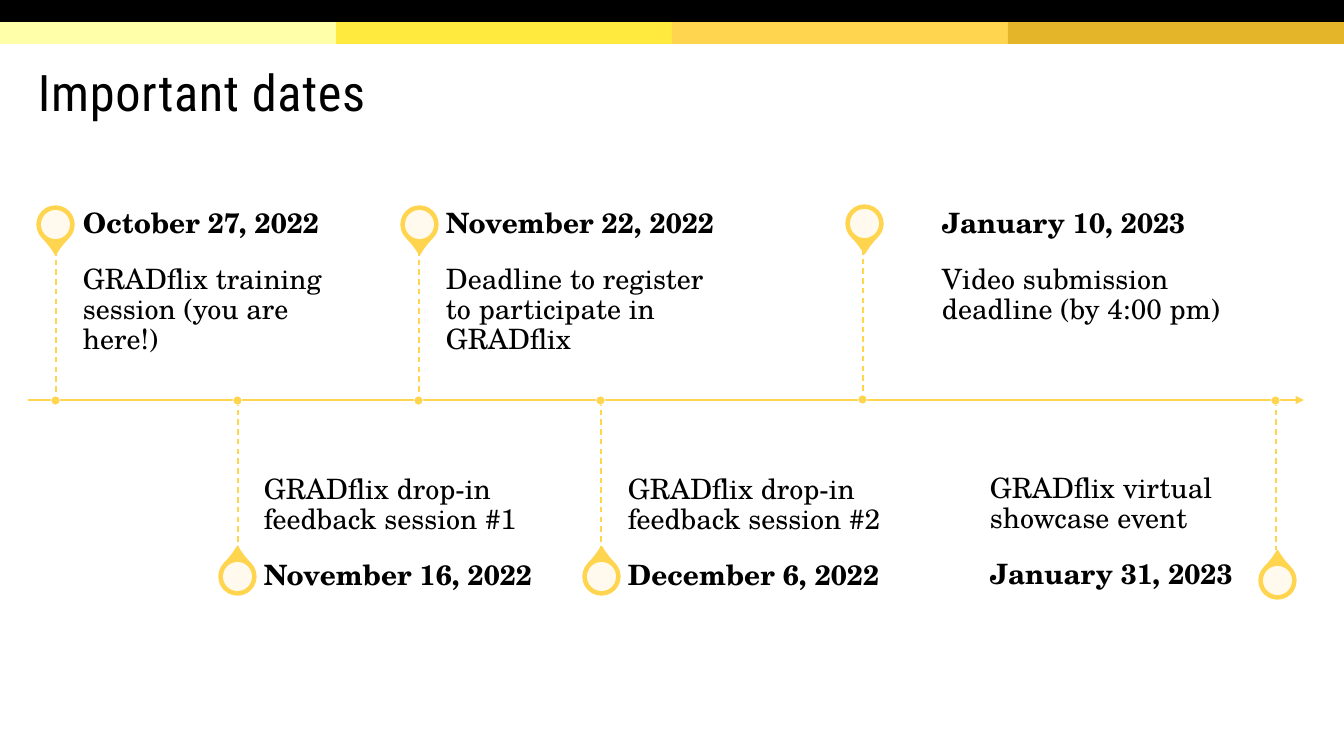
from collections import namedtuple

from lxml.etree import SubElement
from pptx import Presentation
from pptx.dml.color import RGBColor
from pptx.enum.dml import MSO_LINE
from pptx.enum.shapes import MSO_CONNECTOR, MSO_SHAPE
from pptx.enum.text import MSO_ANCHOR
from pptx.oxml.ns import qn
from pptx.util import Pt

BLACK = RGBColor(0x00, 0x00, 0x00)
WHITE = RGBColor(0xFF, 0xFF, 0xFF)
CREAM = RGBColor(0xFF, 0xFF, 0xAA)
LEMON = RGBColor(0xFF, 0xEA, 0x3D)
AMBER = RGBColor(0xFF, 0xD5, 0x4F)
GOLD = RGBColor(0xE4, 0xB4, 0x29)

WIDTH, HEIGHT = 1344, 756
AXIS_Y = 400
STEM, DATE_HEIGHT = 150, 52
PIN, DISC, DOT = 37, 29, 9

# x of the stem, left and top of the pin, left of the text, vertical shifts
Event = namedtuple("Event", "above stem pin_left pin_top text_left date note stem_shift text_shift",
                   defaults=(0, 0))
EVENTS = [
    Event(True, 56, 37, 206, 83, "October 27, 2022",
          "GRADflix training session (you are here!)"),
    Event(False, 238, 219, 558, 264, "November 16, 2022",
          "GRADflix drop-in feedback session #1"),
    Event(True, 419, 401, 206, 446, "November 22, 2022",
          "Deadline to register to participate in GRADflix"),
    Event(False, 601, 583, 558, 628, "December 6, 2022",
          "GRADflix drop-in feedback session #2"),
    Event(True, 863, 846, 205, 942, "January 10, 2023",
          "Video submission deadline (by 4:00 pm)", stem_shift=-1),
    Event(False, 1276, 1259, 562, 990, "January 31, 2023",
          "GRADflix virtual showcase event", text_shift=-1),
]


def px(length):
    return round(length * 914400 / 100.8)


class Timeline:
    """Draws the parts of the timeline on one page."""

    title_font = "Roboto Condensed"
    body_font = "TeX Gyre Schola"

    def __init__(self, page):
        self.shapes = page.shapes

    def shape(self, kind, left, top, width, height, fill, line=None, weight=1, alpha=None):
        shape = self.shapes.add_shape(kind, px(left), px(top), px(width), px(height))
        shape.shadow.inherit = False
        shape.fill.solid()
        shape.fill.fore_color.rgb = fill
        if alpha is not None:
            color = shape.fill._xPr.find(".//" + qn("a:srgbClr"))
            SubElement(color, qn("a:alpha")).set("val", str(alpha * 1000))
        if line is None:
            shape.line.fill.background()
        else:
            shape.line.color.rgb = line
            shape.line.width = Pt(weight)
        return shape

    def line(self, x1, y1, x2, y2, weight, dashed=False, arrow=False):
        line = self.shapes.add_connector(MSO_CONNECTOR.STRAIGHT, px(x1), px(y1), px(x2), px(y2))
        line.line.color.rgb = AMBER
        line.line.width = Pt(weight)
        if dashed:
            line.line.dash_style = MSO_LINE.DASH
        if arrow:
            SubElement(line.line._get_or_add_ln(), qn("a:tailEnd")).set("type", "triangle")
        SubElement(line._element.spPr, qn("a:effectLst"))

    def text(self, text, left, top, width, height, insets, anchor, font=body_font,
             size=20, bold=False, line_spacing=0.9, tracking=None):
        box = self.shapes.add_textbox(px(left), px(top), px(width), px(height))
        frame = box.text_frame
        frame.word_wrap = True
        frame.vertical_anchor = anchor
        (frame.margin_left, frame.margin_top,
         frame.margin_right, frame.margin_bottom) = map(px, insets)
        para = frame.paragraphs[0]
        para.line_spacing = line_spacing
        span = para.add_run()
        span.text = text
        para.font.name = font
        para.font.size = Pt(size)
        para.font.bold = bold
        para.font.color.rgb = BLACK
        if tracking:
            span._r.get_or_add_rPr().set("spc", str(tracking))

    def pin(self, left, top, rotation):
        drop = self.shape(MSO_SHAPE.TEAR, left, top, PIN, PIN, AMBER, AMBER)
        drop.adjustments[0] = 1.15
        drop.rotation = rotation
        inset = (PIN - DISC) // 2
        self.shape(MSO_SHAPE.OVAL, left + inset, top + inset, DISC, DISC, WHITE, alpha=90)

    def event(self, event):
        self.pin(event.pin_left, event.pin_top, 135 if event.above else 315)
        axis = AXIS_Y + event.stem_shift
        text_axis = AXIS_Y + event.text_shift
        if event.above:
            stem_end = axis - STEM
            note_top = text_axis - STEM + 1
            date_top = note_top - DATE_HEIGHT - 1
            insets, anchor = (0, 14, 14, 21), MSO_ANCHOR.TOP
        else:
            stem_end = axis + STEM
            note_top = text_axis
            date_top = note_top + STEM
            insets, anchor = (0, 21, 0, 14), MSO_ANCHOR.BOTTOM
        self.text(event.note, event.text_left, note_top, 302, STEM, insets, anchor)
        self.text(event.date, event.text_left, date_top, 302, DATE_HEIGHT,
                  (0, 0, 14, 0), MSO_ANCHOR.MIDDLE, bold=True)
        self.line(event.stem, min(stem_end, axis), event.stem, max(stem_end, axis), 1, dashed=True)
        self.shape(MSO_SHAPE.OVAL, event.stem - 5, axis - 4, DOT, DOT, AMBER, WHITE, 0.5)


def main():
    deck = Presentation()
    deck.slide_width, deck.slide_height = px(WIDTH), px(HEIGHT)
    timeline = Timeline(deck.slides.add_slide(deck.slide_layouts[6]))

    # Header bands
    colors = [CREAM, LEMON, AMBER, GOLD]
    band = WIDTH // len(colors)
    for index, color in enumerate(colors):
        timeline.shape(MSO_SHAPE.RECTANGLE, index * band, 22, band, 22, color)
    timeline.shape(MSO_SHAPE.RECTANGLE, 0, 0, WIDTH, 22, BLACK)

    # Title
    timeline.text("Important dates", 28, 47, 1275, 99, (10, 5, 10, 5), MSO_ANCHOR.MIDDLE,
                  font=Timeline.title_font, size=36, line_spacing=0.85, tracking=50)

    # Axis and events
    timeline.line(28, AXIS_Y, 1304, AXIS_Y, 1.5, arrow=True)
    for event in EVENTS:
        timeline.event(event)

    deck.save("out.pptx")


if __name__ == "__main__":
    main()
